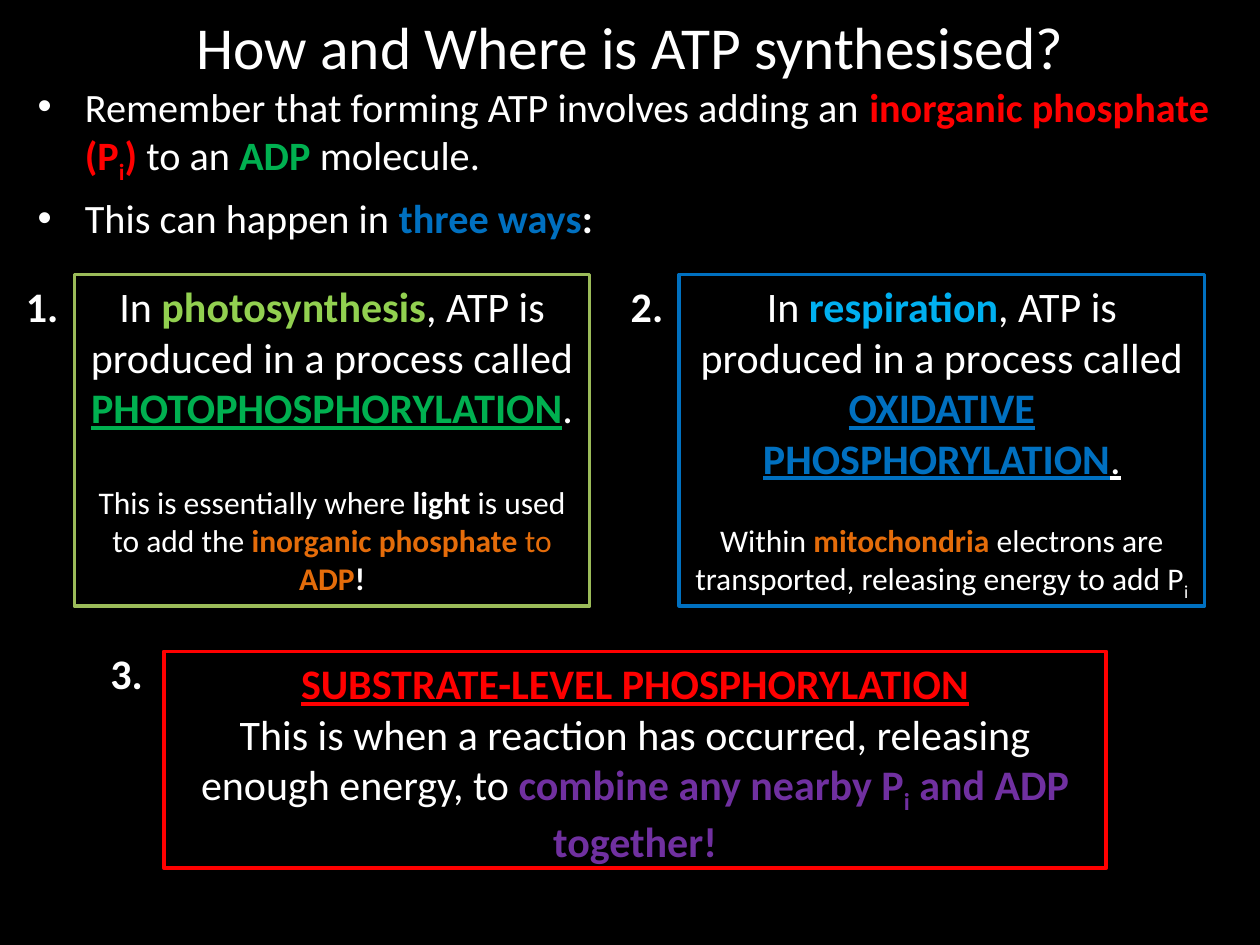
from pptx import Presentation
from pptx import util as u
from pptx.dml.color import RGBColor
from pptx.enum import shapes, text
from pptx.oxml import parse_xml
from pptx.oxml.ns import nsdecls

WHITE, BLACK, RED, GREEN, BLUE = "FFFFFF", "000000", "FF0000", "00B050", "0070C0"
LIME, OLIVE, SKY, ORANGE, PURPLE = "92D050", "9BBB59", "00B0F0", "E46C0A", "7030A0"


def rgb(code):
    return RGBColor.from_string(code)


class Slide:
    font = "Calibri"

    def __init__(self, page):
        self.page = page
        fill = page.background.fill
        fill.solid()
        fill.fore_color.rgb = rgb(BLACK)

    def add_paras(self, box, paras, align=text.PP_ALIGN.CENTER):
        """Fill a box from (size, space before, spans); a span is (text, colour, marks).

        Marks are any of b (bold), u (underlined) and s (subscript).
        """
        frame = box.text_frame
        frame.word_wrap = True
        frame.vertical_anchor = text.MSO_ANCHOR.TOP
        for index, (size, gap, spans) in enumerate(paras):
            para = frame.add_paragraph() if index else frame.paragraphs[0]
            para.alignment = align
            para.space_before = u.Pt(gap)
            para.font.name, para.font.size = self.font, u.Pt(size)
            for words, colour, marks in spans:
                span = para.add_run()
                span.text = words
                font = span.font
                font.name, font.size = self.font, u.Pt(size)
                font.color.rgb = rgb(colour)
                font.bold, font.underline = "b" in marks, "u" in marks
                if "s" in marks:
                    font._element.set("baseline", "-25000")
        return frame

    def label(self, place, paras, align=text.PP_ALIGN.CENTER):
        box = self.page.shapes.add_textbox(*map(u.Inches, place))
        return self.add_paras(box, paras, align)

    def bullets(self, place, paras):
        frame = self.label(place, paras, text.PP_ALIGN.LEFT)
        for para in frame.paragraphs:
            props = para._p.get_or_add_pPr()
            props.set("marL", str(u.Inches(0.375)))
            props.set("indent", str(-u.Inches(0.375)))
            for tag in ('buFont {} typeface="Arial"', 'buChar {} char="•"'):
                bullet = parse_xml(f'<a:{tag.format(nsdecls("a"))}/>')
                props.insert_element_before(bullet, "a:tabLst", "a:defRPr", "a:extLst")

    def panel(self, place, outline, paras):
        box = self.page.shapes.add_shape(
            shapes.MSO_SHAPE.RECTANGLE, *map(u.Inches, place))
        box.shadow.inherit = False
        box.fill.solid()
        box.fill.fore_color.rgb = rgb(BLACK)
        box.line.color.rgb = rgb(outline)
        box.line.width = u.Pt(2)
        self.add_paras(box, paras)


def main():
    deck = Presentation()
    deck.slide_width, deck.slide_height = u.Inches(10), u.Inches(7.5)
    slide = Slide(deck.slides.add_slide(deck.slide_layouts[6]))

    title = slide.label((0.5, 0.21, 9, 0.31), [
        (34, 0, [("How and Where is ATP synthesised?", WHITE, "")])])
    title.vertical_anchor = text.MSO_ANCHOR.MIDDLE

    slide.bullets((0.2, 0.6, 9.61, 6.69), [
        (23, 0, [("Remember that forming ATP involves adding an ", WHITE, ""),
                 ("inorganic phosphate (P", RED, "b"), ("i", RED, "bs"),
                 (")", RED, "b"), (" to an ", WHITE, ""),
                 ("ADP", GREEN, "b"), (" molecule.", WHITE, "")]),
        (23, 4.6, [("This can happen in ", WHITE, ""),
                   ("three ways", BLUE, "b"), (":", WHITE, "b")])])

    slide.panel((0.59, 2.18, 4.09, 2.63), OLIVE, [
        (24, 0, [("In ", WHITE, ""), ("photosynthesis", LIME, "b"),
                 (", ATP is produced in a process called ", WHITE, ""),
                 ("PHOTOPHOSPHORYLATION", GREEN, "bu"), (".", WHITE, "")]),
        (18, 29.3, [("This is essentially where ", WHITE, ""), ("light", WHITE, "b"),
                    (" is used to add the ", WHITE, ""),
                    ("inorganic phosphate", ORANGE, "b"), (" to ", ORANGE, ""),
                    ("ADP", ORANGE, "b"), ("!", WHITE, "b")])])

    slide.panel((5.39, 2.18, 4.17, 2.63), BLUE, [
        (24, 0, [("In ", WHITE, ""), ("respiration", SKY, "b"),
                 (", ATP is produced in a process called ", WHITE, ""),
                 ("OXIDATIVE PHOSPHORYLATION", BLUE, "bu"), (".", WHITE, "u")]),
        (18, 22, [("Within ", WHITE, ""), ("mitochondria", ORANGE, "b"),
                  (" electrons are transported, releasing energy to add P", WHITE, ""),
                  ("i", WHITE, "s")])])

    slide.panel((1.3, 5.17, 7.48, 1.72), RED, [
        (24, 0, [("SUBSTRATE-LEVEL PHOSPHORYLATION", RED, "bu")]),
        (24, 0, [("This is when a reaction has occurred, releasing enough energy, to ",
                  WHITE, ""),
                 ("combine any nearby P", PURPLE, "b"), ("i", PURPLE, "bs"),
                 (" and ADP together!", PURPLE, "b")])])

    numbers = [(0, 2.18, 0.67), (4.8, 2.18, 0.67), (0.71, 5.09, 0.59)]
    for number, (left, top, width) in enumerate(numbers, 1):
        slide.label((left, top, width, 0.5), [(24, 0, [(f"{number}.", WHITE, "b")])])

    deck.save("out.pptx")


if __name__ == "__main__":
    main()
